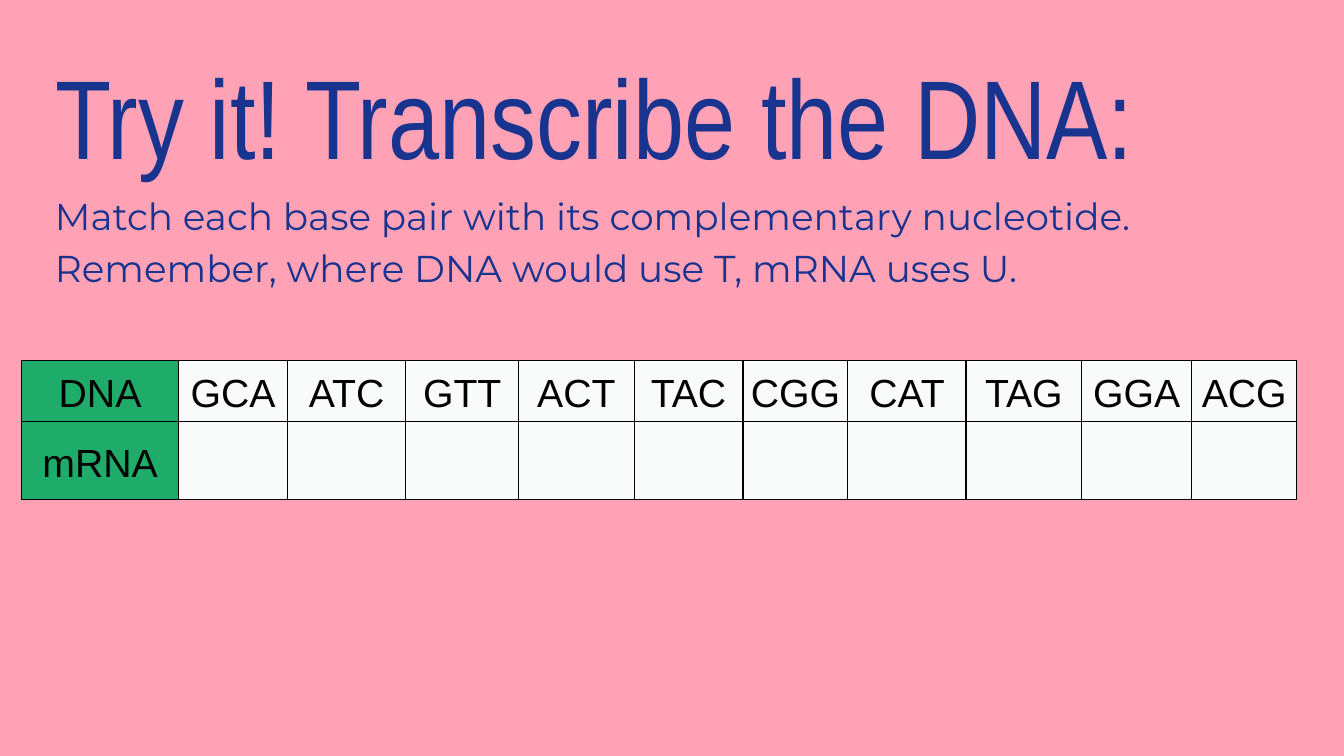
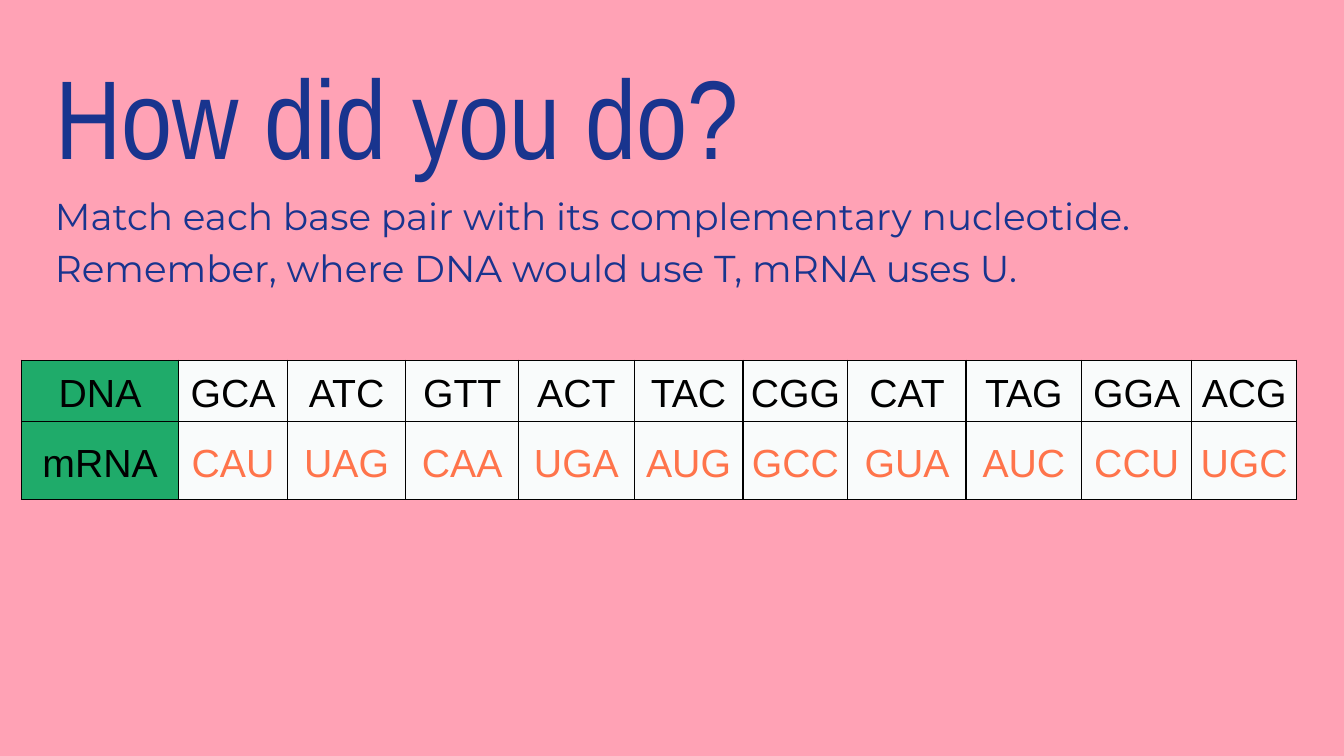
import pptx
import pptx.util
import pptx.dml.color
import pptx.enum.text
import pptx.oxml
import pptx.oxml.ns
from dataclasses import dataclass

Pt = pptx.util.Pt
ALIGN = pptx.enum.text.PP_ALIGN
ANCHOR = pptx.enum.text.MSO_ANCHOR


@dataclass(frozen=True)
class Theme:
    """Colours, fonts and type sizes of the deck."""
    back: str = "FFA2B5"
    ink: str = "19348E"
    head: str = "1FAB6A"
    cell: str = "F9FBFB"
    rule: str = "000000"
    key: str = "FF744B"
    title: tuple = ("Arial Narrow", 60)
    body: tuple = ("Montserrat", 20)
    code: tuple = ("Arial", 21)
    lead: float = 1.15


THEME = Theme()
HINT = ("Match each base pair with its complementary nucleotide. "
        "Remember, where DNA would use T, mRNA uses U.")
DNA = "GCA ATC GTT ACT TAC CGG CAT TAG GGA ACG".split()
MRNA = "CAU UAG CAA UGA AUG GCC GUA AUC CCU UGC".split()
COLS = (84.2, 58.3, 63.4, 60.5, 61.9, 58.3, 56.2, 63.4, 61.9, 59, 56.2)
ROWS = (32.4, 41.8)


def color(code):
    """Return a colour from its hex code."""
    return pptx.dml.color.RGBColor.from_string(code)


def style(para, face, tint, align=ALIGN.LEFT):
    """Set the font, colour and alignment of a paragraph."""
    para.font.name, size = face
    para.font.size = Pt(size)
    para.font.color.rgb = color(tint)
    para.alignment = align


def write(shape, text, box, face):
    """Place a text shape and fill it with one styled paragraph."""
    shape.left, shape.top, shape.width, shape.height = map(Pt, box)
    frame = shape.text_frame
    frame.word_wrap = True
    frame.auto_size = pptx.enum.text.MSO_AUTO_SIZE.NONE
    frame.vertical_anchor = ANCHOR.TOP
    frame.margin_left = frame.margin_right = Pt(7.2)
    frame.margin_top = frame.margin_bottom = Pt(7.2)
    frame.text = text
    style(frame.paragraphs[0], face, THEME.ink)
    return frame.paragraphs[0]


def border(cell):
    """Draw a thin line on each side of a cell."""
    props = cell._tc.get_or_add_tcPr()
    space = pptx.oxml.ns.nsdecls("a")
    for spot, side in enumerate(("lnL", "lnR", "lnT", "lnB")):
        props.insert(spot, pptx.oxml.parse_xml(
            f'<a:{side} {space} w="{Pt(0.83)}"><a:solidFill>'
            f'<a:srgbClr val="{THEME.rule}"/></a:solidFill></a:{side}>'))


def fill_cell(cell, text, tint, fill):
    """Format one table cell and write its text."""
    cell.fill.solid()
    cell.fill.fore_color.rgb = color(fill)
    cell.vertical_anchor = ANCHOR.MIDDLE
    cell.margin_left = cell.margin_right = Pt(3)
    cell.margin_top = cell.margin_bottom = Pt(3)
    cell.text = text
    para = cell.text_frame.paragraphs[0]
    style(para, THEME.code, tint, ALIGN.CENTER)
    para.line_spacing = THEME.lead
    border(cell)


def add_grid(slide, codes):
    """Add the table of DNA triplets above their mRNA codes."""
    table = slide.shapes.add_table(
        len(ROWS), len(COLS), Pt(11.5), Pt(193),
        Pt(sum(COLS)), Pt(sum(ROWS))).table
    for col, width in zip(table.columns, COLS):
        col.width = Pt(width)
    for row, height in zip(table.rows, ROWS):
        row.height = Pt(height)
    lines = (("DNA", DNA, THEME.rule), ("mRNA", codes, THEME.key))
    for row, (name, line, tint) in enumerate(lines):
        fill_cell(table.cell(row, 0), name, THEME.rule, THEME.head)
        for col, text in enumerate(line, 1):
            fill_cell(table.cell(row, col), text, tint, THEME.cell)


def add_slide(deck, title, codes):
    """Add a slide with a title, the hint and the table."""
    slide = deck.slides.add_slide(deck.slide_layouts[5])
    slide.background.fill.solid()
    slide.background.fill.fore_color.rgb = color(THEME.back)
    write(slide.shapes.title, title, (22.3, 18, 661, 66.2), THEME.title)
    box = (22.3, 92.9, 628.6, 275.8)
    hint = write(slide.shapes.add_textbox(*map(Pt, box)), HINT, box, THEME.body)
    hint.line_spacing = THEME.lead
    hint.space_after = Pt(12)
    add_grid(slide, codes)


def main():
    """Build and save the deck."""
    deck = pptx.Presentation()
    deck.slide_width, deck.slide_height = Pt(720), Pt(405)
    add_slide(deck, "Try it! Transcribe the DNA:", [""] * len(DNA))
    add_slide(deck, "How did you do?", MRNA)
    deck.save("out.pptx")


if __name__ == "__main__":
    main()
